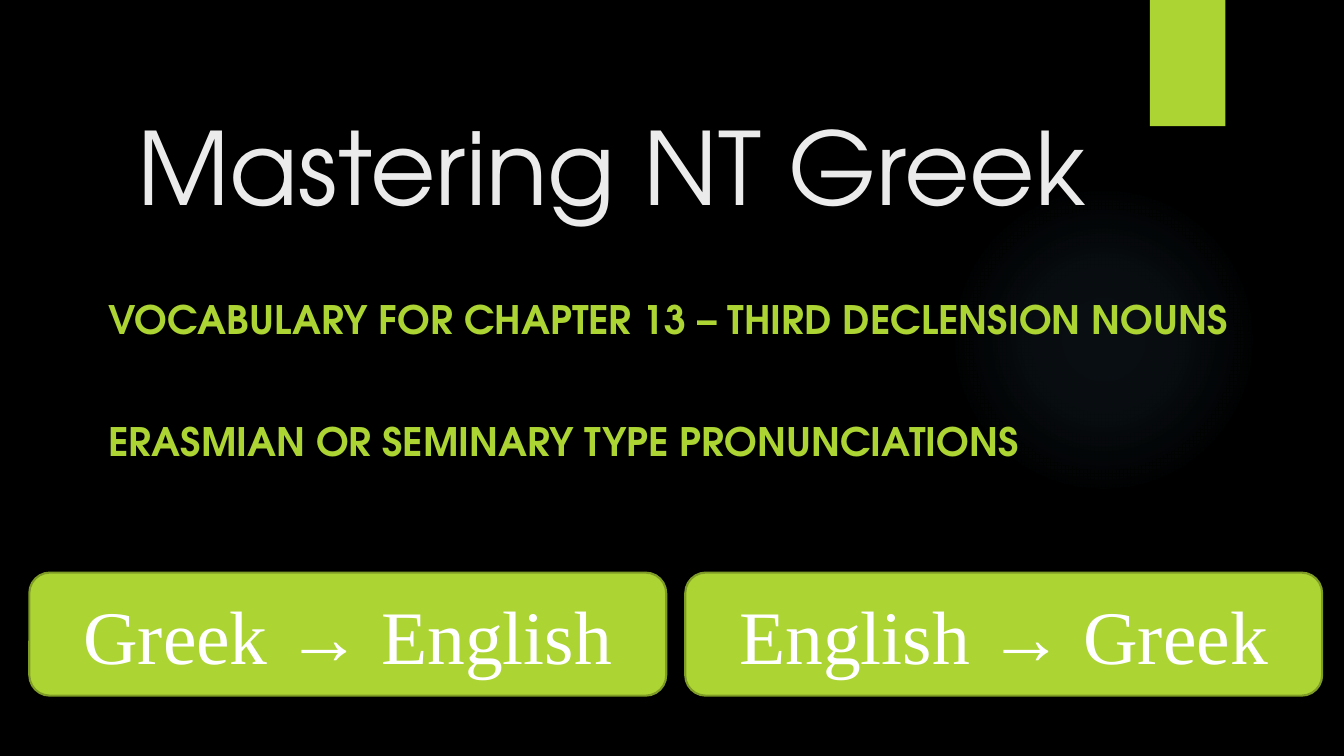
from dataclasses import dataclass

from lxml.etree import SubElement
from pptx import Presentation
from pptx.dml.color import RGBColor
from pptx.enum.shapes import MSO_SHAPE
from pptx.enum.text import MSO_ANCHOR, MSO_AUTO_SIZE, PP_ALIGN
from pptx.oxml.ns import qn
from pptx.util import Cm, Pt

LIME = "ACD433"
DARK_LIME = "7F9D26"
WHITE = "FFFFFF"
OFF_WHITE = "EBEBEB"
BLACK = "000000"
GLOW_BLUE = "7AC4F0"
HEADING_FONT = "TeX Gyre Adventor"
BUTTON_FONT = "Times New Roman"


@dataclass(frozen=True)
class Area:
    left: float
    top: float
    width: float
    height: float

    def lengths(self):
        return Cm(self.left), Cm(self.top), Cm(self.width), Cm(self.height)


@dataclass(frozen=True)
class TextStyle:
    font: str
    size: int
    colour: str
    bold: bool = False


TITLE_STYLE = TextStyle(HEADING_FONT, 72, OFF_WHITE)
SUBTITLE_STYLE = TextStyle(HEADING_FONT, 28, LIME, bold=True)
BUTTON_STYLE = TextStyle(BUTTON_FONT, 54, WHITE)

GLOW_AREA = Area(23.9, 4.65, 7.82, 7.82)
TAB_AREA = Area(28.98, 0, 1.9, 3.18)
TITLE_AREA = Area(3.2, 1.78, 25.5, 4.04)
SUBTITLE_AREA = Area(2.49, 7.32, 29.36, 6.83)
BUTTON_AREA = Area(0.74, 14.43, 16.05, 3.1)
BUTTON_PITCH = 16.53

SUBTITLES = (
    "VOCABULARY FOR CHAPTER 13 – THIRD DECLENSION NOUNS",
    "ERASMIAN OR SEMINARY TYPE PRONUNCIATIONS",
)
SUBTITLE_GAP = Pt(53.5)
BUTTON_LABELS = ("Greek → English", "English → Greek")
GLOW_STOPS = ((0, 7), (36, 6), (69, 0))  # position and opacity, in percent


def colour(value: str) -> RGBColor:
    return RGBColor.from_string(value)


def add_span(para, text: str, style: TextStyle) -> None:
    span = para.add_run()
    span.text = text
    span.font.name = style.font
    span.font.size = Pt(style.size)
    span.font.bold = style.bold
    span.font.color.rgb = colour(style.colour)


def add_plain_shape(page, kind: MSO_SHAPE, area: Area, fill: str):
    shape = page.shapes.add_shape(kind, *area.lengths())
    shape.shadow.inherit = False
    shape.fill.solid()
    shape.fill.fore_color.rgb = colour(fill)
    shape.line.fill.background()
    return shape


def add_glow(page):
    """Add a circle that fades out radially."""
    glow = add_plain_shape(page, MSO_SHAPE.OVAL, GLOW_AREA, GLOW_BLUE)
    solid = glow.element.spPr.find(qn("a:solidFill"))
    gradient = solid.makeelement(qn("a:gradFill"), {"rotWithShape": "1"})
    stops = SubElement(gradient, qn("a:gsLst"))
    for position, opacity in GLOW_STOPS:
        stop = SubElement(stops, qn("a:gs"), pos=str(position * 1000))
        tint = SubElement(stop, qn("a:srgbClr"), val=GLOW_BLUE)
        SubElement(tint, qn("a:alpha"), val=str(opacity * 1000))
    radial = SubElement(gradient, qn("a:path"), {"path": "circle"})
    SubElement(radial, qn("a:fillToRect"), dict.fromkeys("ltrb", "50000"))
    solid.getparent().replace(solid, gradient)
    return glow


def format_title(title) -> None:
    title.left, title.top, title.width, title.height = TITLE_AREA.lengths()
    frame = title.text_frame
    frame.auto_size = MSO_AUTO_SIZE.NONE
    frame.vertical_anchor = MSO_ANCHOR.BOTTOM
    para = frame.paragraphs[0]
    para.alignment = PP_ALIGN.LEFT
    add_span(para, "Mastering NT Greek", TITLE_STYLE)


def add_subtitles(page) -> None:
    frame = page.shapes.add_textbox(*SUBTITLE_AREA.lengths()).text_frame
    frame.word_wrap = True
    for index, text in enumerate(SUBTITLES):
        para = frame.add_paragraph() if index else frame.paragraphs[0]
        if index:
            para.space_before = SUBTITLE_GAP
        add_span(para, text, SUBTITLE_STYLE)


def add_button(page, area: Area, label: str) -> None:
    button = add_plain_shape(page, MSO_SHAPE.ROUNDED_RECTANGLE, area, LIME)
    button.line.color.rgb = colour(DARK_LIME)
    button.line.width = Pt(1.5)
    frame = button.text_frame
    frame.vertical_anchor = MSO_ANCHOR.MIDDLE
    para = frame.paragraphs[0]
    para.alignment = PP_ALIGN.CENTER
    add_span(para, label, BUTTON_STYLE)


def main() -> None:
    deck = Presentation()
    deck.slide_width, deck.slide_height = Cm(33.87), Cm(19.05)
    page = deck.slides.add_slide(deck.slide_layouts.get_by_name("Title Only"))
    page.background.fill.solid()
    page.background.fill.fore_color.rgb = colour(BLACK)

    title = page.shapes.title
    format_title(title)
    glow = add_glow(page)
    title.element.addprevious(glow.element)  # the glow lies behind the title
    add_plain_shape(page, MSO_SHAPE.RECTANGLE, TAB_AREA, LIME)
    add_subtitles(page)
    for index, label in enumerate(BUTTON_LABELS):
        left = BUTTON_AREA.left + index * BUTTON_PITCH
        area = Area(left, BUTTON_AREA.top, BUTTON_AREA.width, BUTTON_AREA.height)
        add_button(page, area, label)

    deck.save("out.pptx")


if __name__ == "__main__":
    main()
